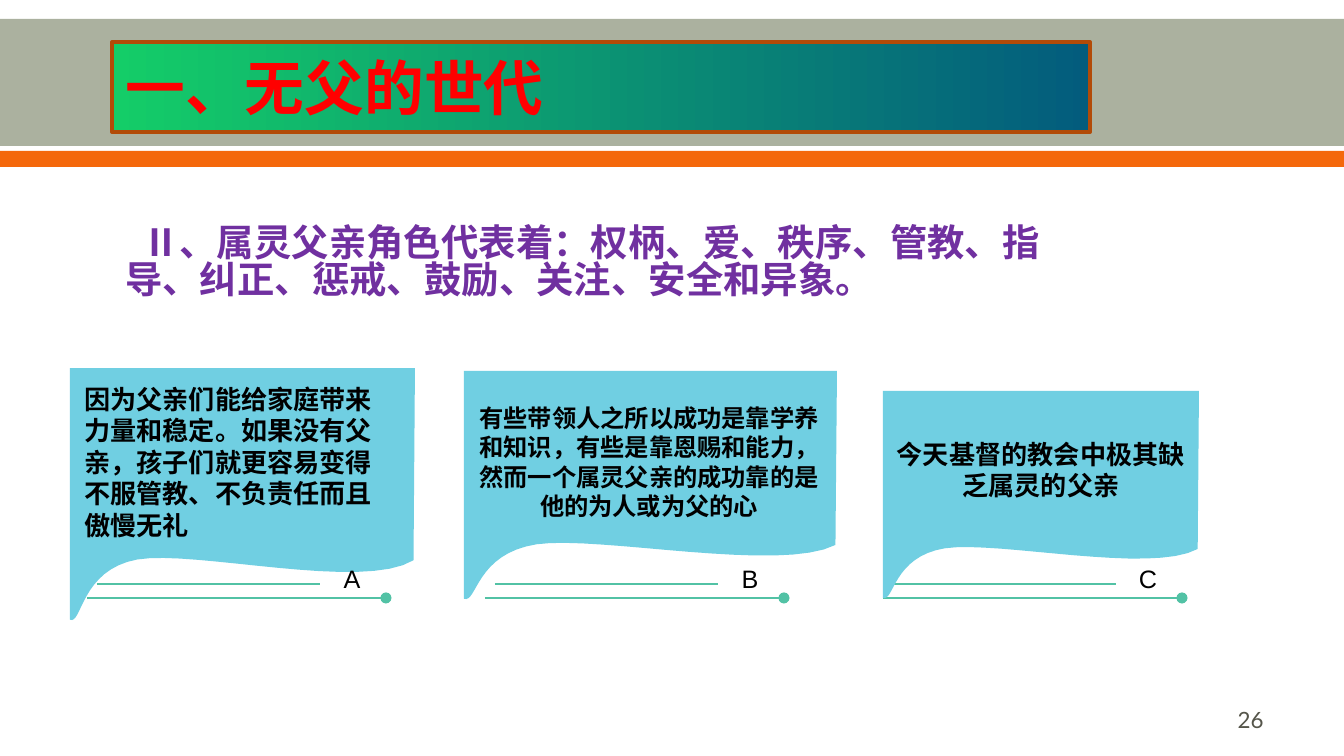
import pptx
import pptx.dml.color
import pptx.enum.shapes
import pptx.enum.text
import pptx.oxml
import pptx.oxml.ns
import pptx.util
from lxml import etree

PX = 914400 / 134.4
CJK = "Noto Sans CJK SC"
ALIGN = pptx.enum.text.PP_ALIGN
ANCHOR = pptx.enum.text.MSO_ANCHOR
STEP = 398
WAVE = [
    [(0.996, 0.76), (0.848, 0.883), (0.362, 0.718), (0.195, 0.757)],
    [(0.195, 0.757), (0.031, 0.798), (0.035, 1.016), (0, 0.995)],
]
CARDS = [
    ("A", (70, 368, 345, 253), (71, 380, 331, 164), "因为父亲们能给家庭带来力量和稳定。如果没有父亲，孩子们就更容易变得不服管教、不负责任而且傲慢无礼",
     14, ALIGN.LEFT, 7),
    ("B", (464, 371, 373, 229), (462, 386, 374, 176), "有些带领人之所以成功是靠学养和知识，有些是靠恩赐和能力，然而一个属灵父亲的成功靠的是他的为人或为父的心",
     13, ALIGN.CENTER, 31),
    ("C", (883, 391, 316, 208), (883, 394, 316, 152), "今天基督的教会中极其缺乏属灵的父亲", 14, ALIGN.CENTER, 7),
]


def px(*values):
    """Turn pixel lengths into a list of EMU lengths."""
    return [pptx.util.Emu(round(v * PX)) for v in values]


def rgb(code):
    """Turn a hex string into a colour."""
    return pptx.dml.color.RGBColor.from_string(code)


def apply(obj, values):
    """Set attributes of an object from a dict."""
    for name, value in values.items():
        setattr(obj, name, value)


def write(sp, text, size, color, font=CJK, bold=False, anchor=ANCHOR.MIDDLE, bottom=7, **para):
    """Fill a shape with one formatted paragraph."""
    tf = sp.text_frame
    apply(tf, {"word_wrap": True, "auto_size": pptx.enum.text.MSO_AUTO_SIZE.NONE,
               "vertical_anchor": anchor, "margin_bottom": px(bottom)[0]})
    p = tf.paragraphs[0]
    apply(p, para)
    r = p.add_run()
    r.text = text
    apply(r.font, {"size": pptx.util.Pt(size), "bold": bold, "name": font})
    r.font.color.rgb = rgb(color)
    etree.SubElement(r.font._element, pptx.oxml.ns.qn("a:ea")).set("typeface", CJK)
    return p


def add_text(s, box, text, size, color, **fmt):
    """Add a text box and return its paragraph."""
    return write(s.shapes.add_textbox(*px(*box)), text, size, color, **fmt)


def paint(sp, color):
    """Give a shape a flat fill without outline or shadow."""
    sp.fill.solid()
    sp.fill.fore_color.rgb = rgb(color)
    sp.line.fill.background()
    sp.shadow.inherit = False


def add_band(s, top, height, color):
    """Add a band across the full width."""
    kind = pptx.enum.shapes.MSO_SHAPE.RECTANGLE
    paint(s.shapes.add_shape(kind, *px(0, top, 1344, height)), color)


def add_rule(s, x1, x2, y, dot=False):
    """Add a thin horizontal line, with a dot at its end if wanted."""
    kind = pptx.enum.shapes.MSO_CONNECTOR.STRAIGHT
    c = s.shapes.add_connector(kind, *px(x1, y, x2, y))
    c.line.color.rgb = rgb("52C2A5")
    c.line.width = pptx.util.Pt(0.75)
    if dot:
        tail = etree.SubElement(c.line._get_or_add_ln(), pptx.oxml.ns.qn("a:tailEnd"))
        tail.set("type", "oval")
    etree.SubElement(c._element.spPr, pptx.oxml.ns.qn("a:effectLst"))


def bezier(points, steps=16):
    """List points along a cubic curve."""
    curve = []
    for i in range(steps + 1):
        t = i / steps
        weights = ((1 - t) ** 3, 3 * t * (1 - t) ** 2, 3 * t * t * (1 - t), t ** 3)
        curve.append(tuple(sum(w * p[k] for w, p in zip(weights, points)) for k in (0, 1)))
    return curve


def add_banner(s, box):
    """Add a panel with a wavy lower edge."""
    left, top, width, height = box
    outline = [(0, 0), (1, 0)] + [pt for part in WAVE for pt in bezier(part)]
    points = [tuple(px(left + x * width, top + y * height)) for x, y in outline]
    fb = s.shapes.build_freeform(*points[0], scale=1.0)
    fb.add_line_segments(points[1:], close=True)
    paint(fb.convert_to_shape(), "70CFE2")


def add_card(s, i, letter, panel, box, text, size, align, bottom):
    """Add one lettered card with its rules, panel and text."""
    x = i * STEP
    add_rule(s, 97 + x, 320 + x, 584)
    add_rule(s, 87 + x, 386 + x, 598, dot=True)
    add_banner(s, panel)
    add_text(s, (324 + x, 554, 56, 44), letter, 13.5, "000000", font="Arial",
             alignment=ALIGN.CENTER, line_spacing=1.2)
    add_text(s, box, text, size, "000000", bold=True, bottom=bottom,
             alignment=align, line_spacing=1.0)


def add_title(s, text):
    """Format the title placeholder as a rounded gradient bar."""
    sp = s.shapes.title
    s.shapes._spTree.append(sp._element)
    apply(sp, dict(zip(("left", "top", "width", "height"), px(112, 42, 978, 90))))
    ns = pptx.oxml.ns.nsdecls("a")
    sp._element.spPr.append(pptx.oxml.parse_xml(
        f'<a:prstGeom {ns} prst="flowChartAlternateProcess"><a:avLst/></a:prstGeom>'))
    sp.fill.gradient()
    sp.fill.gradient_angle = 0
    for stop, color, position in zip(sp.fill.gradient_stops, ("14CD68", "035C7D"), (0, 1)):
        stop.color.rgb = rgb(color)
        stop.position = position
    sp.line.color.rgb = rgb("B24B08")
    sp.line.width = pptx.util.Pt(2.22)
    write(sp, text, 32, "FF0000", font="Arial", bold=True, alignment=ALIGN.JUSTIFY)


def main():
    """Build the slide and save it."""
    prs = pptx.Presentation()
    apply(prs, dict(zip(("slide_width", "slide_height"), px(1344, 756))))
    s = prs.slides.add_slide(prs.slide_layouts[5])
    add_band(s, 19, 127, "ABB19F")
    add_band(s, 151, 16, "F4680B")
    add_text(s, (964, 700, 313, 40), "26", 12, "55554A", font="Lato", alignment=ALIGN.RIGHT)
    add_title(s, "一、无父的世代")
    for i, card in enumerate(CARDS):
        add_card(s, i, *card)
    p = add_text(s, (112, 220, 954, 104), "Ⅱ、属灵父亲角色代表着：权柄、爱、秩序、管教、指导、纠正、惩戒、鼓励、关注、安全和异象。",
                 20, "7030A0", bold=True, anchor=ANCHOR.TOP, line_spacing=0.83)
    p._p.get_or_add_pPr().set("indent", str(px(17)[0]))
    prs.save("out.pptx")


if __name__ == "__main__":
    main()
